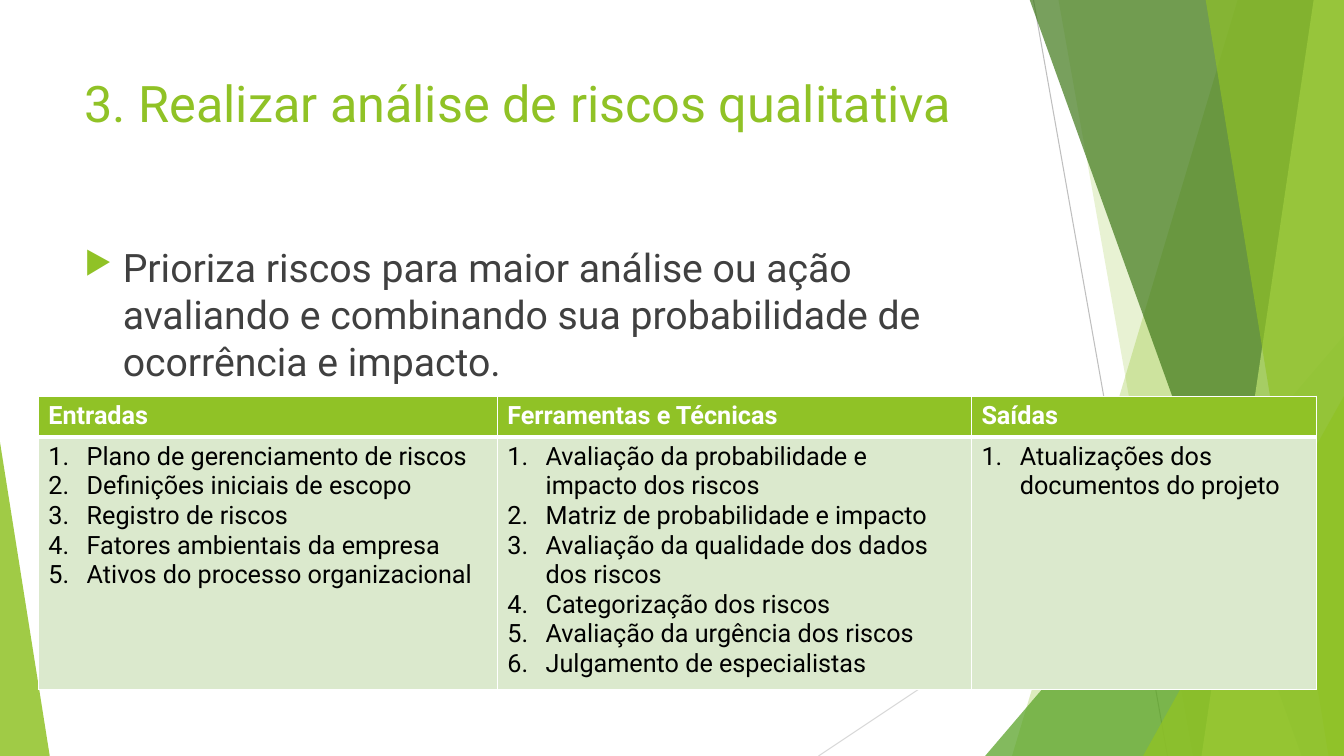
from dataclasses import dataclass

from lxml.etree import SubElement
from pptx import Presentation
from pptx.dml.color import RGBColor
from pptx.enum.shapes import MSO_CONNECTOR, MSO_SHAPE
from pptx.enum.text import MSO_ANCHOR
from pptx.oxml.ns import qn
from pptx.util import Emu, Inches, Pt

WIDTH, HEIGHT = Inches(13.33), Inches(7.5)
FONT = "Roboto"
GREEN, WHITE, BLACK, GREY = "90C226", "FFFFFF", "000000", "404040"
PALE_GREEN = "DBE9CD"
INDENT = Inches(0.38)


# Positions and sizes are percentages of the slide's width and height.
@dataclass(frozen=True)
class Ray:
    start: tuple[float, float]
    end: tuple[float, float]
    color: str


@dataclass(frozen=True)
class Panel:
    """A full-height band that reaches from a slanted left edge to the right side."""
    top_x: float
    bottom_x: float
    color: str
    opacity: int


@dataclass(frozen=True)
class Wedge:
    """A right triangle standing on the bottom of the slide."""
    left: float
    top: float
    width: float
    apex: int
    color: str
    opacity: int


@dataclass(frozen=True)
class Column:
    heading: str
    width: float
    items: tuple[str, ...]


RAYS = (
    Ray((76.9, 0), (86.87, 100), "BFBFBF"),
    Ray((100, 53.7), (60.9, 100), "D9D9D9"),
)
FACETS = (
    Panel(92.1, 75.3, GREEN, 30),
    Panel(78.75, 88.75, GREEN, 20),
    Wedge(73.3, 44.4, 26.7, 1, "54A021", 72),
    Panel(76.6, 96.85, "3F7819", 70),
    Panel(97.75, 89.4, "C0E474", 70),
    Panel(89.7, 98.85, GREEN, 65),
    Wedge(85.05, 52.4, 14.95, 1, GREEN, 80),
    Wedge(0, 58.5, 3.7, 0, GREEN, 85),
)
COLUMNS = (
    Column("Entradas", 34.15, (
        "Plano de gerenciamento de riscos",
        "Definições iniciais de escopo",
        "Registro de riscos",
        "Fatores ambientais da empresa",
        "Ativos do processo organizacional",
    )),
    Column("Ferramentas e Técnicas", 35.28, (
        "Avaliação da probabilidade e impacto dos riscos",
        "Matriz de probabilidade e impacto",
        "Avaliação da qualidade dos dados dos riscos",
        "Categorização dos riscos",
        "Avaliação da urgência dos riscos",
        "Julgamento de especialistas",
    )),
    Column("Saídas", 25.68, ("Atualizações dos documentos do projeto",)),
)


def across(share: float) -> Emu:
    return Emu(round(WIDTH * share / 100))


def down(share: float) -> Emu:
    return Emu(round(HEIGHT * share / 100))


def rgb(color: str) -> RGBColor:
    return RGBColor.from_string(color)


def draw_ray(page, ray: Ray) -> None:
    (x1, y1), (x2, y2) = ray.start, ray.end
    line = page.shapes.add_connector(
        MSO_CONNECTOR.STRAIGHT, across(x1), down(y1), across(x2), down(y2))
    line.line.color.rgb = rgb(ray.color)
    line.line.width = Pt(0.75)
    SubElement(line._element.spPr, qn("a:effectLst"))


def draw_facet(page, facet: Panel | Wedge) -> None:
    if isinstance(facet, Panel):
        builder = page.shapes.build_freeform(across(facet.top_x), down(-0.1), scale=1.0)
        builder.add_line_segments([
            (across(100), down(-0.1)),
            (across(100), down(100)),
            (across(facet.bottom_x), down(100)),
        ], close=True)
        shape = builder.convert_to_shape()
    else:
        shape = page.shapes.add_shape(
            MSO_SHAPE.ISOSCELES_TRIANGLE, across(facet.left), down(facet.top),
            across(facet.width), down(100 - facet.top))
        shape.adjustments[0] = facet.apex
    shape.shadow.inherit = False
    shape.line.fill.background()
    shape.fill.solid()
    shape.fill.fore_color.rgb = rgb(facet.color)
    tint = shape._element.spPr.find(f"{qn('a:solidFill')}/{qn('a:srgbClr')}")
    SubElement(tint, qn("a:alpha"), val=str(facet.opacity * 1000))


def add_span(para, text: str, size: int, color: str, bold: bool = False) -> None:
    span = para.add_run()
    span.text = text
    span.font.name = FONT
    span.font.size = Pt(size)
    span.font.bold = bold
    span.font.color.rgb = rgb(color)


def hang(para):
    """Give the paragraph a hanging indent and return its properties."""
    properties = para._p.get_or_add_pPr()
    properties.set("marL", str(INDENT))
    properties.set("indent", str(-INDENT))
    return properties


def add_text_box(page, top: float, height: float):
    box = page.shapes.add_textbox(across(5.55), down(top), across(70.5), down(height))
    box.text_frame.word_wrap = True
    box.text_frame.vertical_anchor = MSO_ANCHOR.TOP
    return box.text_frame.paragraphs[0]


def style_cell(cell, fill: str, top: float, bottom: float) -> None:
    """Set the white borders, in points, and the fill of a table cell."""
    properties = cell._tc.get_or_add_tcPr()
    for edge, width in (("L", 1), ("R", 1), ("T", top), ("B", bottom)):
        border = SubElement(properties, qn(f"a:ln{edge}"), w=str(Pt(width)))
        SubElement(SubElement(border, qn("a:solidFill")), qn("a:srgbClr"), val=WHITE)
    cell.fill.solid()
    cell.fill.fore_color.rgb = rgb(fill)


def draw_table(page, columns: tuple[Column, ...]) -> None:
    row_heights = (5.4, 33.4)
    table = page.shapes.add_table(
        2, len(columns), across(2.85), down(52.4),
        across(sum(column.width for column in columns)), down(sum(row_heights))).table
    for row, height in zip(table.rows, row_heights):
        row.height = down(height)
    for index, column in enumerate(columns):
        table.columns[index].width = across(column.width)
        header, content = table.cell(0, index), table.cell(1, index)
        style_cell(header, GREEN, 1, 3)
        style_cell(content, PALE_GREEN, 3, 1)
        add_span(header.text_frame.paragraphs[0], column.heading, 18, WHITE, bold=True)
        for number, item in enumerate(column.items):
            frame = content.text_frame
            para = frame.add_paragraph() if number else frame.paragraphs[0]
            SubElement(hang(para), qn("a:buAutoNum"), type="arabicPeriod")
            add_span(para, item, 18, BLACK)


def main() -> None:
    deck = Presentation()
    deck.slide_width, deck.slide_height = WIDTH, HEIGHT
    page = deck.slides.add_slide(deck.slide_layouts[6])

    for ray in RAYS:
        draw_ray(page, ray)
    for facet in FACETS:
        draw_facet(page, facet)

    title = add_text_box(page, 8.9, 19.2)
    add_span(title, "3. Realizar análise de riscos qualitativa", 36, GREEN)

    summary = add_text_box(page, 31.5, 56.5)
    bullet = hang(summary)
    SubElement(SubElement(bullet, qn("a:buClr")), qn("a:srgbClr"), val=GREEN)
    SubElement(bullet, qn("a:buSzPct"), val="80000")
    SubElement(bullet, qn("a:buChar"), char="▶")
    add_span(summary, "Prioriza riscos para maior análise ou ação avaliando e combinando "
             "sua probabilidade de ocorrência e impacto.", 28, GREY)

    draw_table(page, COLUMNS)
    deck.save("out.pptx")


if __name__ == "__main__":
    main()
